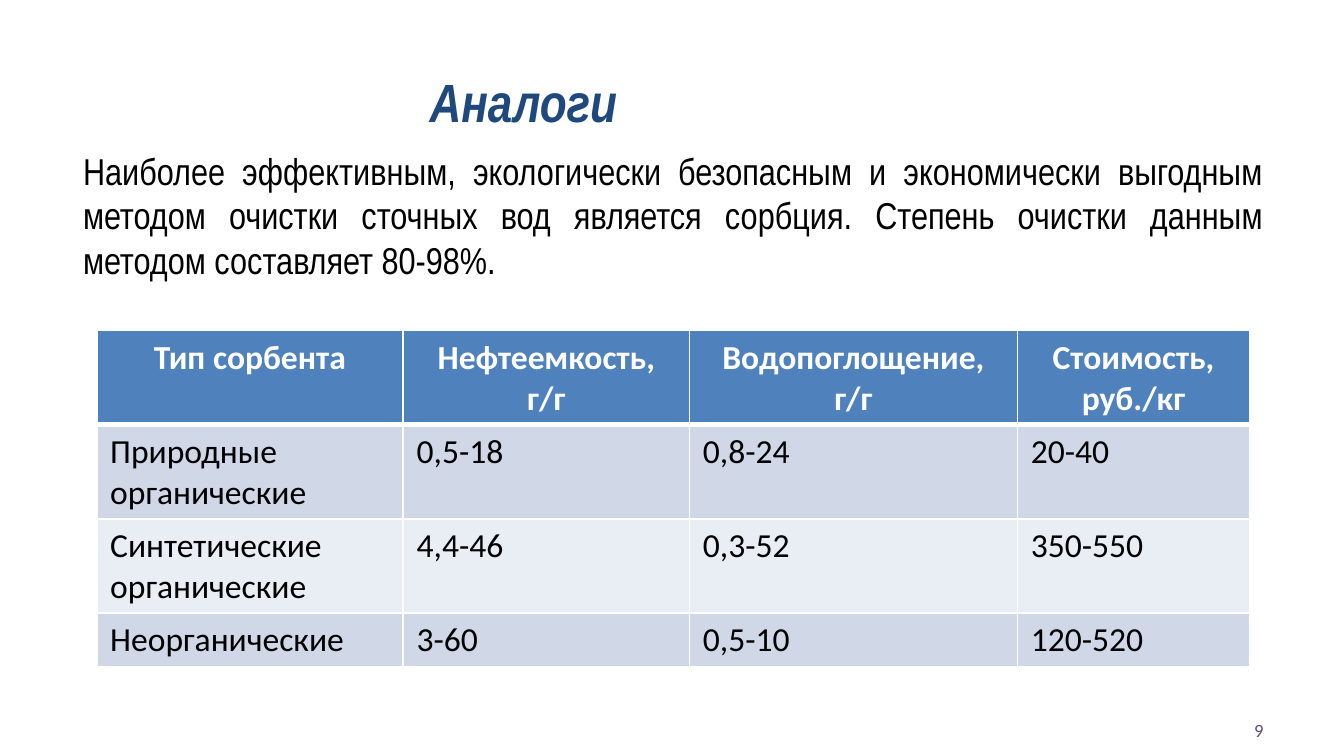
from lxml.etree import SubElement
from pptx import Presentation
from pptx.dml.color import RGBColor
from pptx.enum.text import MSO_ANCHOR, PP_ALIGN
from pptx.oxml.ns import qn
from pptx.util import Inches, Pt

COLORS = {
    "title": "1F497D",
    "text": "000000",
    "number": "604A7B",
    "white": "FFFFFF",
    "header": "4F81BD",
    "band_dark": "D0D8E8",
    "band_light": "E9EDF4",
}


def write(frame, text, font="Calibri", size=18, color="text", bold=False,
          italic=False, align=PP_ALIGN.LEFT, anchor=MSO_ANCHOR.TOP):
    frame.word_wrap = True
    frame.vertical_anchor = anchor
    para = frame.paragraphs[0]
    para.text = text
    para.alignment = align
    for span in para.runs:
        span.font.name = font
        span.font.size = Pt(size)
        span.font.bold = bold
        span.font.italic = italic
        span.font.color.rgb = RGBColor.from_string(COLORS[color])


def add_borders(cell, bottom_width):
    """Draw white cell borders; call before setting the cell's fill."""
    properties = cell._tc.get_or_add_tcPr()
    for side, width in (("L", 1), ("R", 1), ("T", 1), ("B", bottom_width)):
        line = SubElement(properties, qn(f"a:ln{side}"), w=str(Pt(width)))
        fill = SubElement(line, qn("a:solidFill"))
        SubElement(fill, qn("a:srgbClr"), val=COLORS["white"])


deck = Presentation()
deck.slide_width = Inches(10)
deck.slide_height = Inches(10 * 9 / 16)
page = deck.slides.add_slide(deck.slide_layouts[5])

title = page.shapes.title
title.left, title.top = Inches(1.06), Inches(0.53)
title.width, title.height = Inches(5.67), Inches(0.45)
write(title.text_frame, "Аналоги", font="Arial Narrow", size=28.8,
      color="title", bold=True, italic=True, align=PP_ALIGN.CENTER,
      anchor=MSO_ANCHOR.MIDDLE)

summary = page.shapes.add_textbox(Inches(0.52), Inches(1.05), Inches(8.98), Inches(1.11))
write(summary.text_frame,
      "Наиболее эффективным, экологически безопасным и экономически выгодным "
      "методом очистки сточных вод является сорбция. Степень очистки данным "
      "методом составляет 80-98%.",
      font="Arial Narrow", size=20, align=PP_ALIGN.JUSTIFY)

sorbents = [
    ["Тип сорбента", "Нефтеемкость,\nг/г", "Водопоглощение, г/г", "Стоимость,\nруб./кг"],
    ["Природные органические", "0,5-18", "0,8-24", "20-40"],
    ["Синтетические органические", "4,4-46", "0,3-52", "350-550"],
    ["Неорганические", "3-60", "0,5-10", "120-520"],
]
column_widths = [2.28, 2.13, 2.44, 1.73]
row_heights = [0.7, 0.7, 0.7, 0.4]
table = page.shapes.add_table(
    len(row_heights), len(column_widths), Inches(0.72), Inches(2.46),
    Inches(sum(column_widths)), Inches(sum(row_heights))).table
for column, width in zip(table.columns, column_widths):
    column.width = Inches(width)
for row_index, (row, height) in enumerate(zip(table.rows, row_heights)):
    row.height = Inches(height)
    is_header = row_index == 0
    band = "header" if is_header else "band_dark" if row_index % 2 else "band_light"
    for cell, text in zip(row.cells, sorbents[row_index]):
        add_borders(cell, bottom_width=3 if is_header else 1)
        cell.fill.solid()
        cell.fill.fore_color.rgb = RGBColor.from_string(COLORS[band])
        write(cell.text_frame, text, bold=is_header,
              color="white" if is_header else "text",
              align=PP_ALIGN.CENTER if is_header else PP_ALIGN.LEFT)

page_number = page.shapes.add_textbox(Inches(7.17), Inches(5.28), Inches(2.33), Inches(0.3))
write(page_number.text_frame, "9", size=10, color="number",
      align=PP_ALIGN.RIGHT, anchor=MSO_ANCHOR.MIDDLE)

deck.save("out.pptx")
